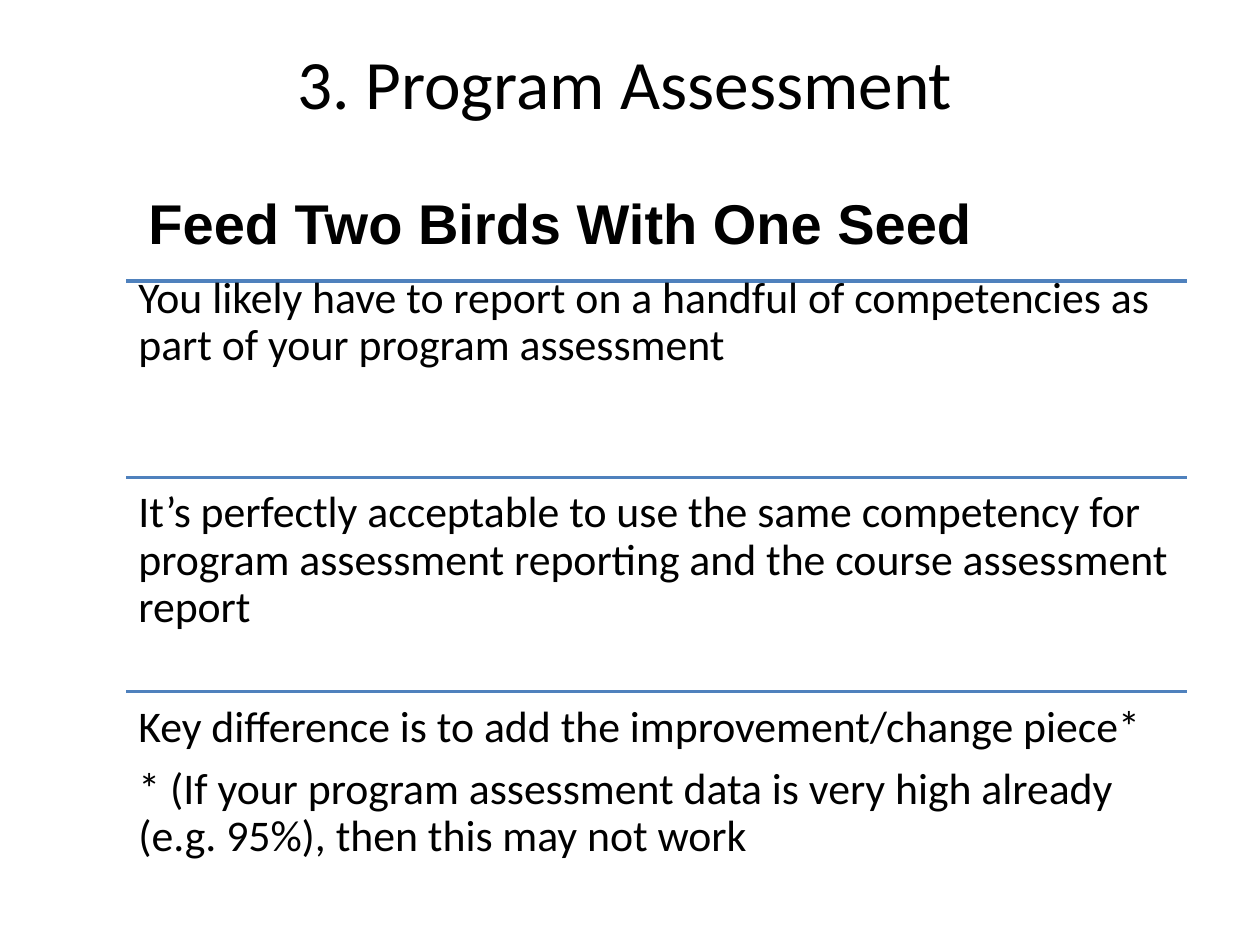
from lxml import etree
from pptx import Presentation
from pptx.dml.color import RGBColor
from pptx.enum.shapes import MSO_CONNECTOR
from pptx.enum.text import MSO_ANCHOR, PP_ALIGN
from pptx.oxml.ns import qn
from pptx.util import Pt

STRAIGHT = MSO_CONNECTOR.STRAIGHT
TOP, MIDDLE, BOTTOM = MSO_ANCHOR.TOP, MSO_ANCHOR.MIDDLE, MSO_ANCHOR.BOTTOM
LEFT, CENTER = PP_ALIGN.LEFT, PP_ALIGN.CENTER

BLACK, BLUE = "000000", "4F81BD"
POINTS_LEFT, POINTS_WIDTH, POINT_HEIGHT = 72, 606.24, 122.4

# Each point: rule position, text position, paragraphs
POINTS = [
    (160.56, 150.48, [
        "You likely have to report on a handful of competencies as part of "
        "your program assessment"]),
    (272.88, 272.88, [
        "It’s perfectly acceptable to use the same competency for program "
        "assessment reporting and the course assessment report"]),
    (395.28, 395.28, [
        "Key difference is to add the improvement/change piece*",
        "* (If your program assessment data is very high already (e.g. 95%), "
        "then this may not work"]),
]


def color(hex_value):
    """Return the colour for a hex string."""
    return RGBColor.from_string(hex_value)


def add_text(slide, paragraphs, left, top, width, height, *, size,
             font="Calibri", bold=False, align=LEFT, anchor=TOP,
             inset=(7.2, 3.6), line_spacing=1.0, space_after=0):
    """Add a wrapped text box with one paragraph per string."""
    box = slide.shapes.add_textbox(Pt(left), Pt(top), Pt(width), Pt(height))
    frame = box.text_frame
    frame.word_wrap = True
    frame.vertical_anchor = anchor
    frame.margin_left = frame.margin_right = Pt(inset[0])
    frame.margin_top = frame.margin_bottom = Pt(inset[1])
    frame.text = "\n".join(paragraphs)
    for paragraph in frame.paragraphs:
        paragraph.alignment = align
        paragraph.line_spacing = line_spacing
        paragraph.space_after = Pt(space_after)
        paragraph.font.name = font
        paragraph.font.size = Pt(size)
        paragraph.font.bold = bold
        paragraph.font.color.rgb = color(BLACK)


def add_rule(slide, left, top, width):
    """Add a horizontal blue rule without a shadow."""
    rule = slide.shapes.add_connector(
        STRAIGHT, Pt(left), Pt(top), Pt(left + width), Pt(top))
    rule.line.color.rgb = color(BLUE)
    rule.line.width = Pt(2)
    etree.SubElement(rule._element.spPr, qn("a:effectLst"))


def main():
    """Build and save the slide."""
    deck = Presentation()
    deck.slide_width, deck.slide_height = Pt(720), Pt(540)
    slide = deck.slides.add_slide(deck.slide_layouts[6])
    add_text(slide, ["3. Program Assessment"], 36, 21.6, 642.24, 50.4,
             size=39.6, align=CENTER, anchor=MIDDLE)
    add_text(slide, ["Feed Two Birds With One Seed"], 77.76, 72, 570.24, 77.76,
             size=32, font="Arial", bold=True, anchor=BOTTOM)
    for rule_top, text_top, paragraphs in POINTS:
        add_rule(slide, POINTS_LEFT, rule_top, POINTS_WIDTH)
        add_text(slide, paragraphs, POINTS_LEFT, text_top, POINTS_WIDTH,
                 POINT_HEIGHT, size=25, inset=(7.2, 7.2), line_spacing=0.9,
                 space_after=8.75)
    deck.save("out.pptx")


if __name__ == "__main__":
    main()
